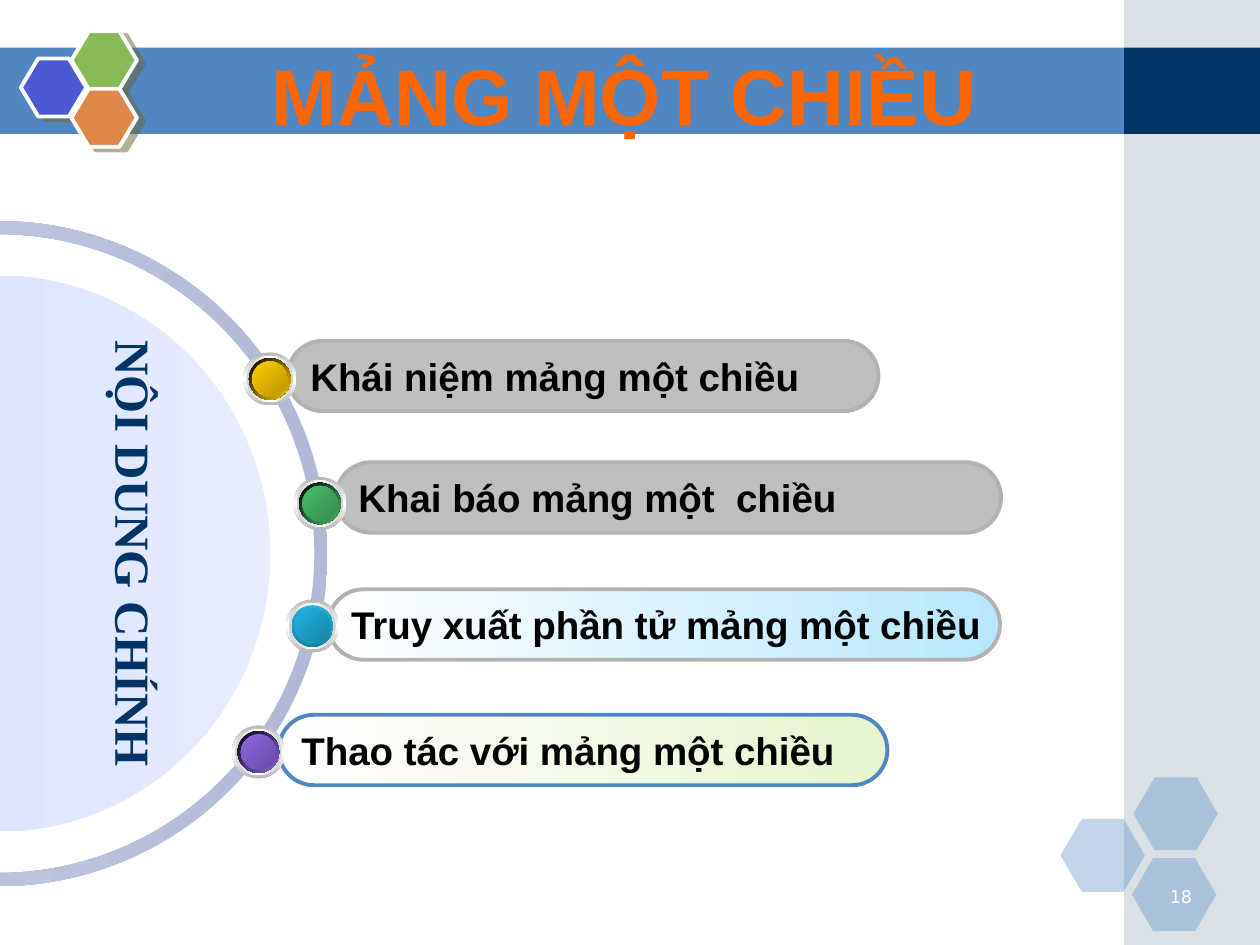
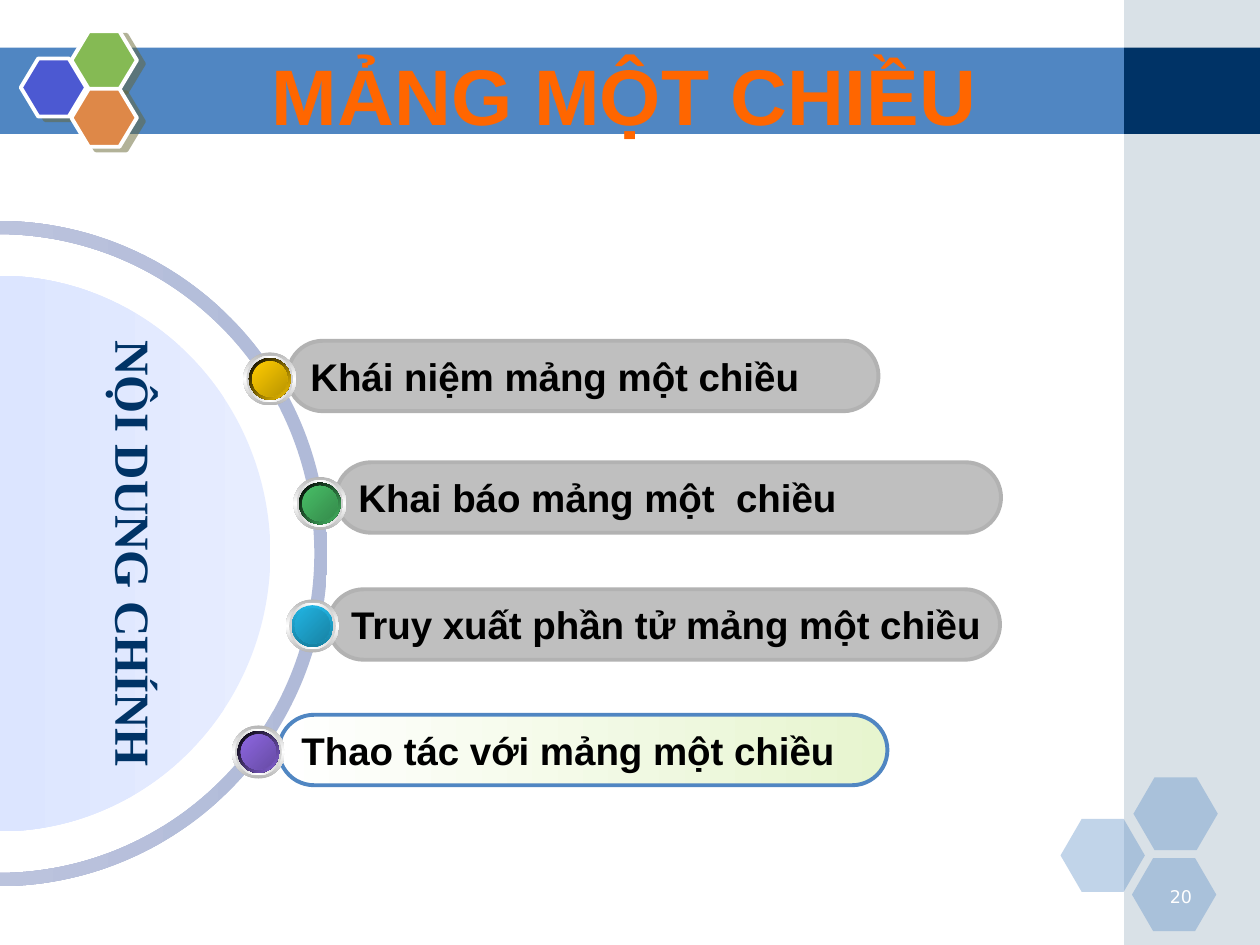
from dataclasses import dataclass

from pptx import Presentation
from pptx.dml.color import RGBColor
from pptx.enum.shapes import MSO_SHAPE
from pptx.enum.text import MSO_ANCHOR, MSO_AUTO_SIZE, PP_ALIGN
from pptx.oxml.ns import qn
from pptx.shapes.shapetree import SlideShapes
from pptx.util import Cm, Pt
from lxml.etree import SubElement

COLORS = {
    "band": "5086C2", "navy": "003366", "side": "A0B5C4", "white": "FFFFFF",
    "black": "000000", "title": "FF6600", "indigo": "4C59D2", "leaf": "85BA54",
    "orange": "DE8848", "shadow": "666633", "done": "BFBFBF", "outline": "B2B2B2",
    "ring_left": "C8CEE3", "ring_right": "B0BAD8",
    "disc_left": "CFDCFF", "disc_right": "E7EDFF",
    "metal": "B6B6B6", "silver": "D1D1D1",
    "gold": "FFCC00", "gold_dark": "BA9500", "green": "48BE67", "green_dark": "358B4B",
    "cyan": "21B3E1", "cyan_dark": "1883A4", "violet": "8D67E1", "violet_dark": "674BA4",
    "sky_tint": "B7E7FF", "lime_tint": "E7F5CF",
}


@dataclass
class Topic:
    text: str
    left: float
    top: float
    width: float
    bulb_center: tuple
    bulb: str
    tint: str = "white"
    line: str = "outline"


TOPICS = [
    Topic("Khái niệm mảng một chiều", 5.8, 6.87, 11.91, (5.44, 7.64), "gold"),
    Topic("Khai báo mảng một  chiều", 6.77, 9.32, 13.41, (6.45, 10.15), "green"),
    Topic("Truy xuất phần tử mảng một chiều", 6.62, 11.88, 13.54, (6.3, 12.62),
          "cyan", "sky_tint"),
    Topic("Thao tác với mảng một chiều", 5.62, 14.41, 12.27, (5.21, 15.16),
          "violet", "lime_tint", "band"),
]
PILL_HEIGHT = 1.42


def color(name):
    return RGBColor.from_string(COLORS[name])


def fill_solid(shape, name, opacity=100):
    shape.fill.solid()
    shape.fill.fore_color.rgb = color(name)
    if opacity < 100:
        value = shape._element.spPr.find(qn("a:solidFill"))[0]
        SubElement(value, qn("a:alpha"), val=str(opacity * 1000))


def fill_gradient(shape, names, angle=0):
    """Spread the named colours evenly; the angle runs clockwise."""
    shape.fill.gradient()
    shape.fill.gradient_angle = -angle % 360
    stops = shape._element.spPr.find(qn("a:gradFill")).find(qn("a:gsLst"))
    for stop in list(stops):
        stops.remove(stop)
    for index, name in enumerate(names):
        position = round(100000 * index / (len(names) - 1))
        stop = SubElement(stops, qn("a:gs"), pos=str(position))
        SubElement(stop, qn("a:srgbClr"), val=COLORS[name])


def set_line(shape, name=None):
    if name is None:
        shape.line.fill.background()
    else:
        shape.line.color.rgb = color(name)
        shape.line.width = Pt(2.25)


def add_plain(shapes, kind, left, top, width, height):
    shape = shapes.add_shape(kind, Cm(left), Cm(top), Cm(width), Cm(height))
    shape.shadow.inherit = False
    set_line(shape)
    return shape


def write(shape, text, size, font_name, color_name, align, bold=True):
    shape.text_frame.text = text
    paragraph = shape.text_frame.paragraphs[0]
    paragraph.alignment = align
    font = paragraph.runs[0].font
    font.size, font.name, font.bold = Pt(size), font_name, bold
    font.color.rgb = color(color_name)


# Parts shared by all slides, drawn on the layout
def draw_bands(shapes):
    side_left, side_width, band_top, band_height = 22.66, 2.74, 0.96, 1.74
    band = add_plain(shapes, MSO_SHAPE.RECTANGLE, 0, band_top, side_left, band_height)
    fill_solid(band, "band")
    side = add_plain(shapes, MSO_SHAPE.RECTANGLE, side_left, 0, side_width, 19.05)
    fill_solid(side, "side", 40)
    corner = add_plain(shapes, MSO_SHAPE.RECTANGLE, side_left, band_top,
                       side_width, band_height)
    fill_solid(corner, "navy")


def draw_footer_hexagons(shapes, left, top):
    for x, y in ((0, 0.84), (1.47, 0), (1.44, 1.63)):
        hexagon = add_plain(shapes, MSO_SHAPE.HEXAGON, left + x, top + y, 1.7, 1.47)
        hexagon.adjustments[0] = 0.29
        fill_solid(hexagon, "band", 35)


def add_shadow(shape):
    effects = shape._element.spPr.find(qn("a:effectLst"))
    shadow = SubElement(effects, qn("a:outerShdw"), dist=str(Pt(4.5)),
                        dir=str(27 * 60000), algn="ctr", rotWithShape="0")
    value = SubElement(shadow, qn("a:srgbClr"), val=COLORS["shadow"])
    SubElement(value, qn("a:alpha"), val="50000")


def draw_corner_hexagons(shapes, left, top):
    for x, y, name in ((0, 0.55, "indigo"), (1.02, 0, "leaf"), (1.02, 1.16, "orange")):
        hexagon = add_plain(shapes, MSO_SHAPE.HEXAGON, left + x, top + y, 1.32, 1.17)
        hexagon.adjustments[0] = 0.3
        fill_solid(hexagon, name)
        set_line(hexagon, "white")
        add_shadow(hexagon)


# Half circles at the left edge: upper half rings turned to the right
def add_half_ring(shapes, center_x, center_y, width, height, thickness, gradient):
    ring = add_plain(shapes, MSO_SHAPE.BLOCK_ARC, center_x - width / 2,
                     center_y - height / 2, width, height)
    ring.adjustments[2] = thickness
    ring.rotation = 90
    fill_gradient(ring, gradient, 90)
    return ring


def draw_half_circles(shapes, center_y):
    add_half_ring(shapes, -0.03, center_y, 13.41, 13.26, 0.02, ("ring_right", "ring_left"))
    disc = add_half_ring(shapes, -0.01, center_y, 11.2, 10.92, 0.5,
                         ("disc_right", "disc_left"))
    disc.text_frame.word_wrap = False
    disc.text_frame.vertical_anchor = MSO_ANCHOR.MIDDLE
    write(disc, "NỘI DUNG CHÍNH", 28, "Times New Roman", "navy", PP_ALIGN.CENTER)


# Topic bars and their bulbs
def draw_topic(shapes, topic, done):
    pill = add_plain(shapes, MSO_SHAPE.ROUNDED_RECTANGLE, topic.left, topic.top,
                     topic.width, PILL_HEIGHT)
    pill.adjustments[0] = 0.5
    if done:
        fill_solid(pill, "done")
    else:
        fill_gradient(pill, ("white", topic.tint))
    set_line(pill, topic.line)
    pill.text_frame.word_wrap = False
    pill.text_frame.vertical_anchor = MSO_ANCHOR.MIDDLE
    write(pill, topic.text, 22, "Arial", "black", PP_ALIGN.LEFT)


def draw_bulb(shapes, center, name):
    dark = name + "_dark"
    rim = ((name, dark), 90) if name == "cyan" else (("black", name), 45)
    layers = (
        (1.07, ("metal", "white", "metal"), 90),
        (0.94, ("silver", "white", "silver"), 0),
        (0.84, *rim),
        (0.71, (name, dark), 45),
    )
    bulb = shapes.add_group_shape()
    for size, gradient, angle in layers:
        circle = add_plain(bulb.shapes, MSO_SHAPE.OVAL, center[0] - size / 2,
                           center[1] - size / 2, size, size)
        fill_gradient(circle, gradient, angle)


def place_title(slide, text):
    title = slide.shapes.title
    title.left, title.top, title.width, title.height = Cm(-0.12), Cm(0.84), Cm(25.4), Cm(2.11)
    frame = title.text_frame
    frame.auto_size = MSO_AUTO_SIZE.NONE
    frame.vertical_anchor = MSO_ANCHOR.MIDDLE
    write(title, text, 45, "Arial", "title", PP_ALIGN.CENTER)


def place_number(shapes, number):
    box = shapes.add_textbox(Cm(23.01), Cm(17.73), Cm(1.27), Cm(0.64))
    box.text_frame.word_wrap = True
    write(box, str(number), 10, "DejaVu Sans", "white", PP_ALIGN.RIGHT, bold=False)


def add_agenda_slide(presentation, layout, number, done_count):
    slide = presentation.slides.add_slide(layout)
    place_title(slide, "MẢNG MỘT CHIỀU")
    draw_half_circles(slide.shapes, 11.16)
    for index, topic in reversed(list(enumerate(TOPICS))):
        draw_topic(slide.shapes, topic, done=index < done_count)
    for topic in TOPICS:
        draw_bulb(slide.shapes, topic.bulb_center, topic.bulb)
    place_number(slide.shapes, number)


def main():
    presentation = Presentation()
    presentation.slide_width, presentation.slide_height = Cm(25.4), Cm(19.05)
    layout = presentation.slide_layouts.get_by_name("Title Only")
    shared = SlideShapes(layout.shapes._spTree, layout)
    draw_bands(shared)
    draw_footer_hexagons(shared, 21.38, 15.67)
    draw_corner_hexagons(shared, 0.42, 0.63)
    for number, done_count in ((18, 2), (20, 3)):
        add_agenda_slide(presentation, layout, number, done_count)
    presentation.save("out.pptx")


if __name__ == "__main__":
    main()
